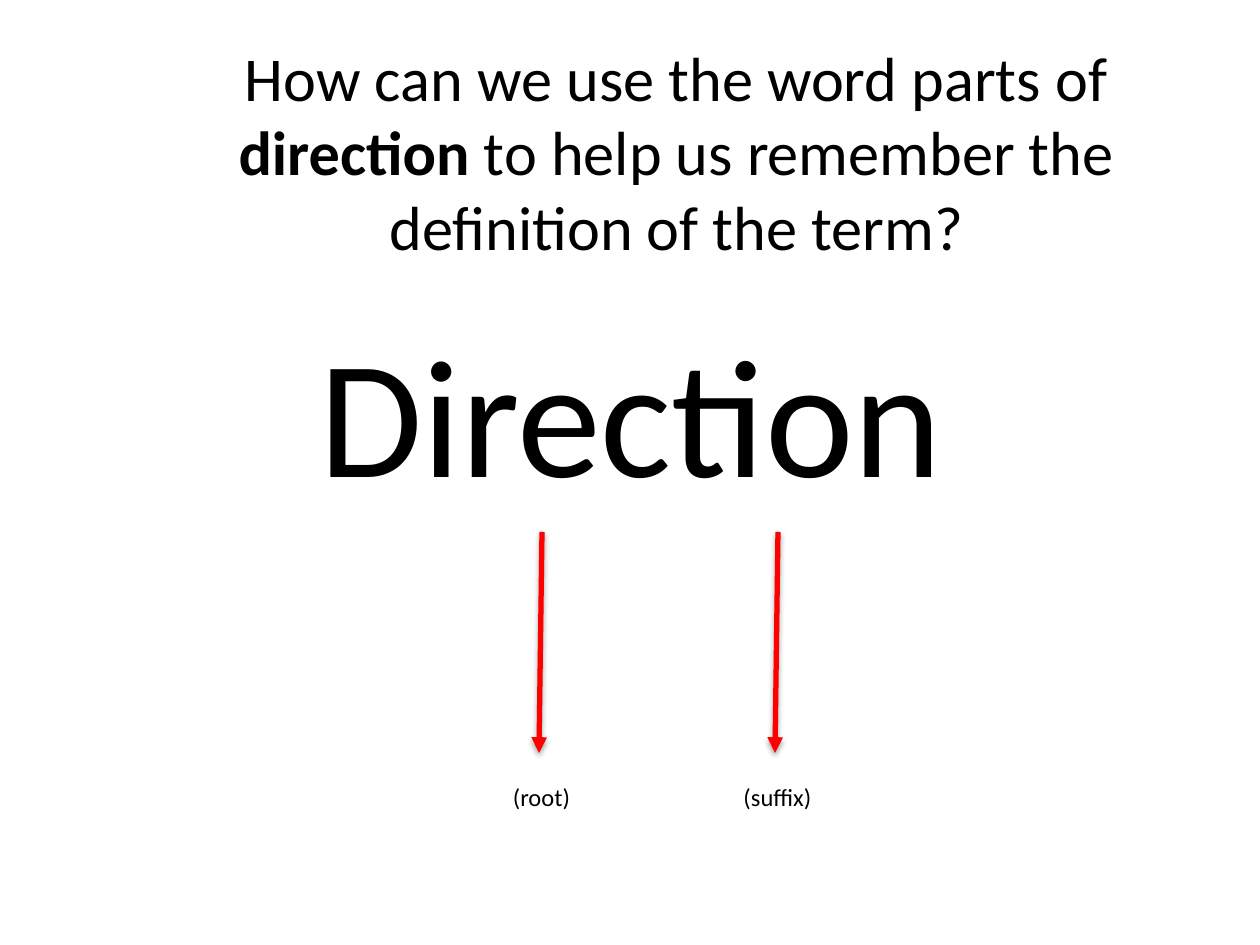
import pptx
import pptx.dml.color
import pptx.enum.shapes
import pptx.enum.text
import pptx.oxml
import pptx.oxml.ns
import pptx.util

# Content
QUESTION = [
    ("How can we use the word parts of ", False),
    ("direction", True),
    (" to help us remember the definition of the term?", False),
]
TERM = "Direction"
WORD_PARTS = ["(root)", "(suffix)"]

# Style
BLACK = pptx.dml.color.RGBColor(0x00, 0x00, 0x00)
RED = pptx.dml.color.RGBColor(0xFF, 0x00, 0x00)
WHITE = pptx.dml.color.RGBColor(0xFF, 0xFF, 0xFF)
FONT = "Calibri"
DRAWING_NS = pptx.oxml.ns.nsdecls("a")
ARROWHEAD = f'<a:tailEnd {DRAWING_NS} type="triangle"/>'
SHADOW = (
    f'<a:effectLst {DRAWING_NS}>'
    '<a:outerShdw blurRad="39370" dist="20320" dir="5400000" rotWithShape="0">'
    '<a:srgbClr val="000000"><a:alpha val="35000"/></a:srgbClr>'
    '</a:outerShdw></a:effectLst>'
)

# Layout in px, 126 to the inch
SLIDE_SIZE = (1260, 945)
QUESTION_BOX = (149, 45, 1055, 212)
TERM_BOX = (125, 311, 1012, 198)
LABEL_BOX = (478, 776, 127, 43)
ARROW = (542, 532, 539, 753)
PART_STEP = 236


def px(*lengths):
    return [pptx.util.Emu(round(length * 914400 / 126)) for length in lengths]


def write(box, runs, size, anchor):
    frame = box.text_frame
    frame.word_wrap = True
    frame.auto_size = pptx.enum.text.MSO_AUTO_SIZE.NONE
    frame.vertical_anchor = anchor
    paragraph = frame.paragraphs[0]
    paragraph.alignment = pptx.enum.text.PP_ALIGN.CENTER
    paragraph.font.name = FONT
    paragraph.font.size = pptx.util.Pt(size)
    paragraph.font.color.rgb = BLACK
    for text, bold in runs:
        run = paragraph.add_run()
        run.text = text
        if bold:
            run.font.bold = True


def add_arrow(slide, shift):
    x1, y1, x2, y2 = ARROW
    arrow = slide.shapes.add_connector(
        pptx.enum.shapes.MSO_CONNECTOR.STRAIGHT, *px(x1 + shift, y1, x2 + shift, y2))
    arrow.line.color.rgb = RED
    arrow.line.width = pptx.util.Pt(3)
    arrow.line._get_or_add_ln().append(pptx.oxml.parse_xml(ARROWHEAD))
    arrow._element.spPr.append(pptx.oxml.parse_xml(SHADOW))


def main():
    deck = pptx.Presentation()
    deck.slide_width, deck.slide_height = px(*SLIDE_SIZE)
    slide = deck.slides.add_slide(deck.slide_layouts.get_by_name("Title Only"))
    anchors = pptx.enum.text.MSO_ANCHOR

    # Question
    question = slide.shapes.title
    question.left, question.top, question.width, question.height = px(*QUESTION_BOX)
    write(question, QUESTION, 35.6, anchors.MIDDLE)

    # Term
    term = slide.shapes.add_textbox(*px(*TERM_BOX))
    write(term, [(TERM, False)], 96, anchors.MIDDLE)

    # Word parts, each an arrow down to its label
    left, top, width, height = LABEL_BOX
    for index, part in enumerate(WORD_PARTS):
        shift = index * PART_STEP
        add_arrow(slide, shift)
        label = slide.shapes.add_textbox(*px(left + shift, top, width, height))
        label.line.color.rgb = WHITE
        label.line.width = pptx.util.Pt(0.75)
        write(label, [(part, False)], 14, anchors.TOP)

    deck.save("out.pptx")


if __name__ == "__main__":
    main()
